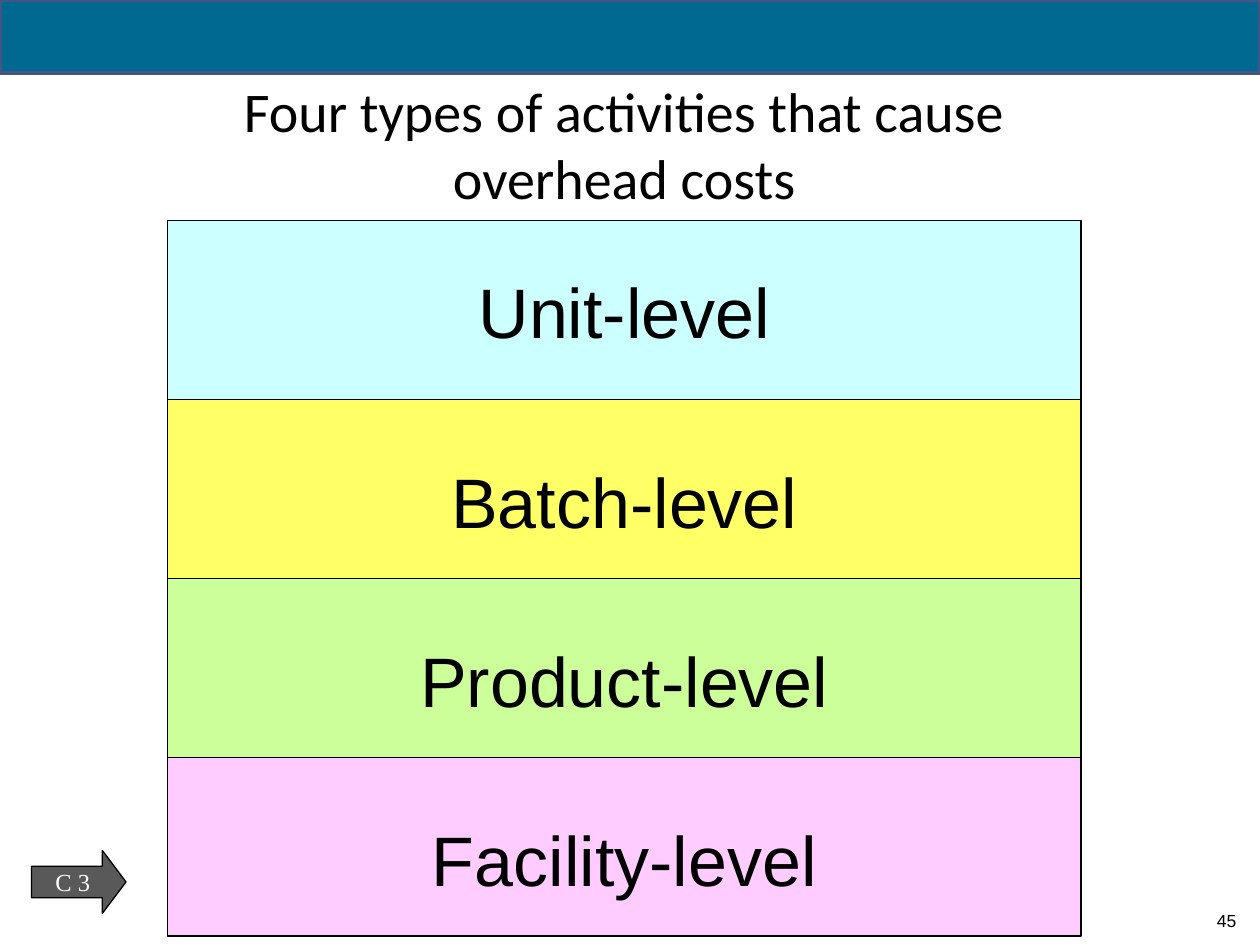
from pptx import Presentation
from pptx.dml.color import RGBColor
from pptx.enum import shapes, text
from pptx.util import Inches, Pt

COLORS = {
    "black": "000000",
    "white": "FFFFFF",
    "bar": "006991",
    "bar_line": "445583",
    "arrow": "595959",
    "unit": "CCFFFF",
    "batch": "FFFF66",
    "product": "CCFF99",
    "facility": "FFCCFF",
}
# label, colour, distance from the top of the band to the top of its label
LEVELS = [
    ("Unit-level", "unit", 0.33),
    ("Batch-level", "batch", 0.42),
    ("Product-level", "product", 0.42),
    ("Facility-level", "facility", 0.42),
]
BAND_LEFT, BAND_TOP = 1.33, 1.75
BAND_WIDTH, BAND_HEIGHT = 7.25, 1.42


def color(name):
    return RGBColor.from_string(COLORS[name])


def write(shape, words, font, size, font_color="black",
          align=text.PP_ALIGN.CENTER, anchor=text.MSO_ANCHOR.TOP,
          wrap=True, space_before=0):
    frame = shape.text_frame
    frame.word_wrap = wrap
    frame.vertical_anchor = anchor
    paragraph = frame.paragraphs[0]
    paragraph.alignment = align
    paragraph.space_before = Pt(space_before)
    run = paragraph.add_run()
    run.text = words
    run.font.name = font
    run.font.size = Pt(size)
    run.font.color.rgb = color(font_color)


def add_label(parent, box, words, font, size, **style):
    label = parent.add_textbox(*map(Inches, box))
    write(label, words, font, size, **style)


def add_block(parent, kind, box, fill, line="black", line_width=0.75):
    block = parent.add_shape(kind, *map(Inches, box))
    block.shadow.inherit = False
    block.fill.solid()
    block.fill.fore_color.rgb = color(fill)
    block.line.color.rgb = color(line)
    block.line.width = Pt(line_width)
    return block


def add_level(slide, index, words, fill, label_offset):
    """Group one coloured band with its label."""
    group = slide.shapes.add_group_shape().shapes
    top = BAND_TOP + index * BAND_HEIGHT
    add_block(group, shapes.MSO_SHAPE.RECTANGLE,
              (BAND_LEFT, top, BAND_WIDTH, BAND_HEIGHT), fill)
    add_label(group, (BAND_LEFT, top + label_offset, BAND_WIDTH, 0.77),
              words, "Arial", 40, space_before=5)


def add_section_arrow(slide):
    arrow = add_block(slide.shapes, shapes.MSO_SHAPE.RIGHT_ARROW,
                      (0.25, 6.75, 0.75, 0.5), "arrow")
    arrow.adjustments[0] = 0.5
    arrow.adjustments[1] = 0.375
    write(arrow, "C 3", "Times New Roman", 14, font_color="white",
          anchor=text.MSO_ANCHOR.MIDDLE, wrap=False)


def main():
    presentation = Presentation()
    presentation.slide_width = Inches(10)
    presentation.slide_height = Inches(7.5)
    slide = presentation.slides.add_slide(presentation.slide_layouts[6])

    add_block(slide.shapes, shapes.MSO_SHAPE.RECTANGLE, (0, 0, 10, 0.58),
              "bar", "bar_line", 2.25)
    add_label(slide.shapes, (1.04, 0.61, 7.83, 1.06),
              "Four types of activities that cause overhead costs",
              "Calibri", 32, anchor=text.MSO_ANCHOR.MIDDLE)
    for index, level in enumerate(LEVELS):
        add_level(slide, index, *level)
    add_label(slide.shapes, (9.33, 7.17, 0.58, 0.25), "45", "Arial", 10,
              align=text.PP_ALIGN.RIGHT)
    add_section_arrow(slide)

    presentation.save("out.pptx")


if __name__ == "__main__":
    main()
